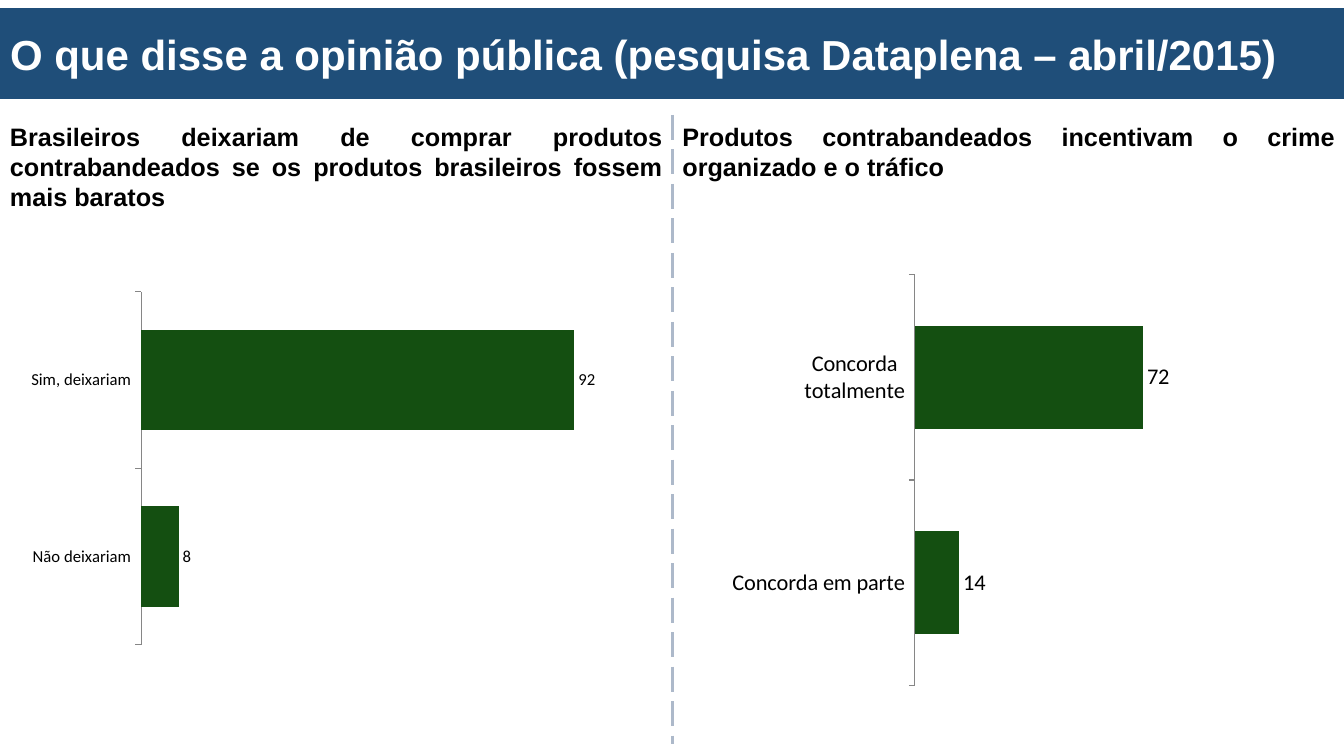
from lxml import etree
from pptx import Presentation
from pptx.chart.data import CategoryChartData
from pptx.dml.color import RGBColor
from pptx.enum import chart as ch, dml, shapes, text
from pptx.oxml import ns, parse_xml
from pptx.util import Inches, Pt

COLORS = {
    "banner": "1F4E79",
    "title": "FFFFFF",
    "text": "000000",
    "bar": "144F11",
    "axis": "868686",
    "divider": "ADB9CA",
}
MIDDLE = 6.67


def color(name):
    return RGBColor.from_string(COLORS[name])


def place(shape, left, top, width, height):
    shape.left, shape.top = Inches(left), Inches(top)
    shape.width, shape.height = Inches(width), Inches(height)


def write(shape, words, size, ink="text", align=text.PP_ALIGN.LEFT,
          anchor=text.MSO_ANCHOR.TOP):
    frame = shape.text_frame
    frame.word_wrap = True
    frame.auto_size = text.MSO_AUTO_SIZE.NONE
    frame.vertical_anchor = anchor
    frame.margin_left = frame.margin_right = Inches(0.1)
    frame.margin_top = frame.margin_bottom = Inches(0.05)
    paragraph = frame.paragraphs[0]
    paragraph.alignment = align
    paragraph.line_spacing = 1.0
    paragraph.space_before = Pt(0)
    run = paragraph.add_run()
    run.text = words
    run.font.name, run.font.size, run.font.bold = "Arial", Pt(size), True
    run.font.color.rgb = color(ink)


def add_banner(slide, words):
    title = slide.shapes.title
    place(title, 0, 0.09, 13.33, 0.89)
    title.fill.solid()
    title.fill.fore_color.rgb = color("banner")
    title.line.color.rgb = color("banner")
    title.line.width = Pt(1)
    write(title, words, 30, ink="title", anchor=text.MSO_ANCHOR.MIDDLE)


def add_heading(slide, words, left, height):
    box = slide.shapes.add_textbox(
        Inches(left), Inches(1.15), Inches(MIDDLE), Inches(height))
    write(box, words, 18, align=text.PP_ALIGN.JUSTIFY)


def set_plot_area(chart, x, y, w, h):
    """Fix the inner plot area as fractions of the chart frame."""
    plot_area = chart._chartSpace.chart.plotArea
    for old in plot_area.findall(ns.qn("c:layout")):
        plot_area.remove(old)
    sizes = "".join(f'<c:{tag} val="{value}"/>'
                    for tag, value in zip("xywh", (x, y, w, h)))
    plot_area.insert(0, parse_xml(
        f'<c:layout {ns.nsdecls("c")}><c:manualLayout>'
        '<c:layoutTarget val="inner"/><c:xMode val="edge"/>'
        f'<c:yMode val="edge"/>{sizes}</c:manualLayout></c:layout>'))


def add_answers_chart(slide, answers, frame, plot_box, size, maximum, gap):
    data = CategoryChartData(number_format="0")
    data.categories = list(answers)
    data.add_series("Respostas (%)", list(answers.values()))
    chart = slide.shapes.add_chart(
        ch.XL_CHART_TYPE.BAR_CLUSTERED, *map(Inches, frame), data).chart
    chart.has_legend = chart.has_title = False
    chart.font.name, chart.font.size = "Calibri", Pt(size)
    chart.font.color.rgb = color("text")

    answer_axis = chart.category_axis
    answer_axis.reverse_order = True
    answer_axis.major_tick_mark = ch.XL_TICK_MARK.OUTSIDE
    answer_axis.format.line.color.rgb = color("axis")
    answer_axis.format.line.width = Pt(0.75)
    percent_axis = chart.value_axis
    percent_axis.minimum_scale, percent_axis.maximum_scale = 0, maximum
    percent_axis.has_major_gridlines = False
    percent_axis.visible = False

    plot = chart.plots[0]
    plot.gap_width = gap
    plot.vary_by_categories = False
    bars = plot.series[0].format.fill
    bars.solid()
    bars.fore_color.rgb = color("bar")
    plot.has_data_labels = True
    labels = plot.data_labels
    labels.show_value = True
    labels.number_format, labels.number_format_is_linked = "0", False
    labels.position = ch.XL_LABEL_POSITION.OUTSIDE_END
    set_plot_area(chart, *plot_box)


def add_divider(slide):
    divider = slide.shapes.add_connector(
        shapes.MSO_CONNECTOR.STRAIGHT,
        Inches(MIDDLE), Inches(1.14), Inches(MIDDLE), Inches(7.38))
    divider.line.color.rgb = color("divider")
    divider.line.width = Pt(2.25)
    divider.line.dash_style = dml.MSO_LINE.LONG_DASH
    etree.SubElement(divider._element.spPr, ns.qn("a:effectLst"))


def main():
    deck = Presentation()
    deck.slide_width, deck.slide_height = Inches(13.33), Inches(7.5)
    slide = deck.slides.add_slide(deck.slide_layouts[5])

    add_banner(
        slide, "O que disse a opinião pública (pesquisa Dataplena – abril/2015)")
    add_heading(
        slide, "Brasileiros deixariam de comprar produtos contrabandeados "
        "se os produtos brasileiros fossem mais baratos", 0, 1.01)
    add_heading(
        slide, "Produtos contrabandeados incentivam o crime organizado "
        "e o tráfico", MIDDLE, 0.71)
    add_answers_chart(
        slide, {"Sim, deixariam": 92, "Não deixariam": 8},
        frame=(0.31, 2.75, 6.23, 3.65), plot_box=(0.17, 0.04, 0.83, 0.96),
        size=12, maximum=110, gap=75)
    add_answers_chart(
        slide, {"Concorda totalmente": 72, "Concorda em parte": 14},
        frame=(7.24, 2.45, 5.24, 4.58), plot_box=(0.35, 0.06, 0.48, 0.89),
        size=16, maximum=80, gap=100)
    add_divider(slide)
    deck.save("out.pptx")


if __name__ == "__main__":
    main()
